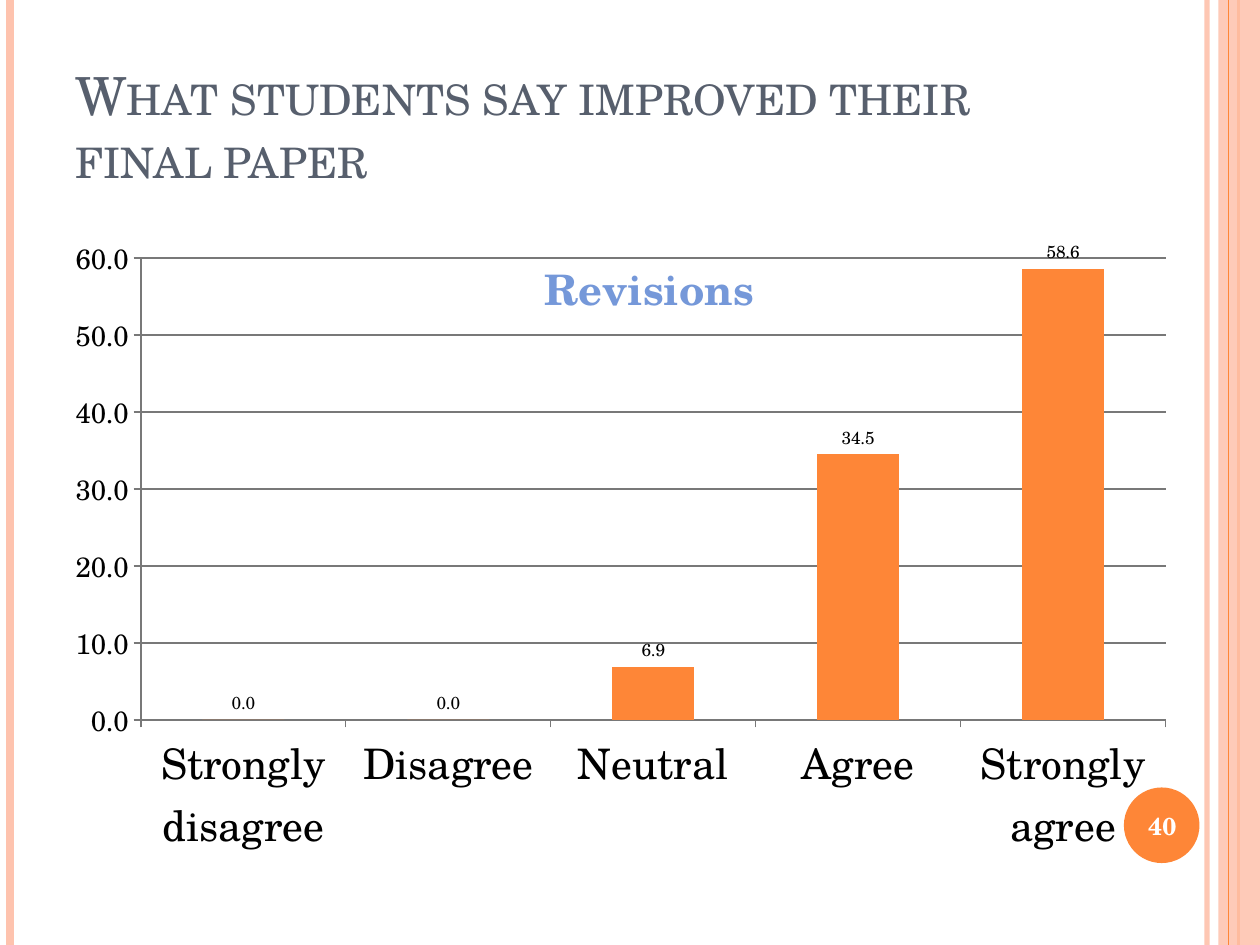
from lxml import etree
from pptx import Presentation
from pptx.chart.data import CategoryChartData
from pptx.dml.color import RGBColor
from pptx.enum.chart import XL_CHART_TYPE as ChartType, XL_LABEL_POSITION as LabelPos
from pptx.enum.chart import XL_TICK_MARK as Tick
from pptx.enum.shapes import MSO_CONNECTOR as Connector, MSO_SHAPE as Shape
from pptx.enum.text import MSO_ANCHOR as Anchor, PP_ALIGN as Align
from pptx.oxml import parse_xml
from pptx.oxml.ns import nsdecls, qn
from pptx.util import Inches, Pt

FONT = "TeX Gyre Schola"
ORANGE = RGBColor(0xFE, 0x86, 0x37)
PEACH = RGBColor(0xFE, 0xC3, 0xAE)
SLATE = RGBColor(0x57, 0x5F, 0x6D)
BLUE = RGBColor(0x75, 0x98, 0xD9)
GRAY = RGBColor(0x78, 0x78, 0x78)
BLACK = RGBColor(0, 0, 0)
WHITE = RGBColor(0xFF, 0xFF, 0xFF)


def set_font(font, size, color=BLACK, bold=False):
    font.name, font.size, font.bold = FONT, Pt(size), bold
    font.color.rgb = color


def add_text(slide, box, text, size, color, bold=False, align=Align.LEFT,
             anchor=Anchor.MIDDLE, small_caps=False):
    frame = slide.shapes.add_textbox(*map(Inches, box)).text_frame
    frame.word_wrap = True
    frame.vertical_anchor = anchor
    paragraph = frame.paragraphs[0]
    paragraph.alignment = align
    run = paragraph.add_run()
    run.text = text
    set_font(run.font, size, color, bold)
    if small_caps:
        run.font._element.set("cap", "small")


def set_opacity(part, percent):
    color = next(part._element.spPr.iter(qn("a:srgbClr")))
    etree.SubElement(color, qn("a:alpha")).set("val", str(percent * 1000))


def add_stripe(slide, x, height, color, width):
    stripe = slide.shapes.add_connector(
        Connector.STRAIGHT, Inches(x), 0, Inches(x), Inches(height))
    stripe.line.color.rgb = color
    stripe.line.width = Pt(width)
    etree.SubElement(stripe._element.spPr, qn("a:effectLst"))
    return stripe


def add_solid(slide, kind, box, color):
    solid = slide.shapes.add_shape(kind, *map(Inches, box))
    solid.shadow.inherit = False
    solid.fill.solid()
    solid.fill.fore_color.rgb = color
    solid.line.fill.background()
    return solid


def add_borders(slide, width, height):
    """Vertical stripes along both slide edges."""
    set_opacity(add_stripe(slide, width - 0.42, height, PEACH, 3), 93)
    add_stripe(slide, 0.08, height, PEACH, 4.5)
    add_stripe(slide, width - 0.17, height, ORANGE, 1.5)
    band = add_solid(slide, Shape.RECTANGLE, (width - 0.33, 0, 0.33, height), PEACH)
    set_opacity(band, 87)
    add_stripe(slide, width - 0.25, height, ORANGE, 0.75)


def set_layout(parent, before, **values):
    """Place a chart part by fractions of the chart area."""
    entries = "".join(f'<c:{tag} val="{val}"/>' for tag, val in values.items())
    layout = parse_xml(f'<c:layout {nsdecls("c")}><c:manualLayout>{entries}'
                       '</c:manualLayout></c:layout>')
    for old in parent.findall(qn("c:layout")):
        parent.remove(old)
    parent.find(qn(before)).addprevious(layout)


def style_axis(axis, size):
    axis.major_tick_mark = Tick.OUTSIDE
    axis.minor_tick_mark = Tick.NONE
    set_font(axis.tick_labels.font, size)
    axis.format.line.color.rgb = GRAY
    axis.format.line.width = Pt(0.75)


def add_revisions_chart(slide, box):
    ratings = CategoryChartData(number_format="0.0")
    ratings.categories = ["Strongly disagree", "Disagree", "Neutral", "Agree",
                          "Strongly agree"]
    ratings.add_series("Revisions", [0, 0, 6.9, 34.5, 58.6])
    chart = slide.shapes.add_chart(
        ChartType.COLUMN_CLUSTERED, *map(Inches, box), ratings).chart
    set_font(chart.font, 10)
    chart.has_legend = False

    # Title, laid over the plot
    chart.has_title = True
    title = chart.chart_title
    title.text_frame.text = "Revisions"
    set_font(title.text_frame.paragraphs[0].runs[0].font, 24, BLUE, True)
    overlay = title._element.get_or_add_overlay() if hasattr(
        title._element, "get_or_add_overlay") else title._element.find(qn("c:overlay"))
    if overlay is None:
        overlay = etree.SubElement(title._element, qn("c:overlay"))
    overlay.set("val", "1")
    set_layout(title._element, "c:overlay", xMode="edge", yMode="edge", x=0.41, y=0.07)

    # Axes
    style_axis(chart.category_axis, 24)
    scores = chart.value_axis
    style_axis(scores, 16)
    scores.minimum_scale, scores.maximum_scale, scores.major_unit = 0, 60, 10
    scores.tick_labels.number_format = "0.0"
    scores.tick_labels.number_format_is_linked = False
    scores.has_major_gridlines = True
    scores.major_gridlines.format.line.color.rgb = GRAY
    scores.major_gridlines.format.line.width = Pt(0.75)

    # Columns and their values
    plot = chart.plots[0]
    plot.gap_width = 150
    plot.vary_by_categories = False
    columns = plot.series[0]
    columns.format.fill.solid()
    columns.format.fill.fore_color.rgb = ORANGE
    labels = columns.data_labels
    labels.show_value = True
    labels.position = LabelPos.OUTSIDE_END
    labels.number_format = "0.0"
    labels.number_format_is_linked = False
    set_font(labels.font, 10)
    plot_area = chart._chartSpace.chart.plotArea
    set_layout(plot_area, "c:barChart", layoutTarget="inner", xMode="edge",
               yMode="edge", x=0.048, y=0.093, w=0.936, h=0.684)


def add_page_badge(slide, box, number):
    left, top, width, height = box
    add_solid(slide, Shape.OVAL, box, ORANGE)
    add_text(slide, (left - 0.03, top + 0.02, width + 0.07, height - 0.03), number,
             14, WHITE, bold=True, align=Align.CENTER)


def main():
    deck = Presentation()
    deck.slide_width, deck.slide_height = Inches(10), Inches(7.5)
    slide = deck.slides.add_slide(deck.slide_layouts[6])
    add_borders(slide, 10, 7.5)
    add_text(slide, (0.5, 0.3, 8.17, 1.25), "What students say improved their final paper",
             30, SLATE, anchor=Anchor.BOTTOM, small_caps=True)
    add_revisions_chart(slide, (0.6, 1.55, 8.79, 5.36))
    add_page_badge(slide, (8.92, 6.25, 0.6, 0.6), "40")
    deck.save("out.pptx")


if __name__ == "__main__":
    main()
